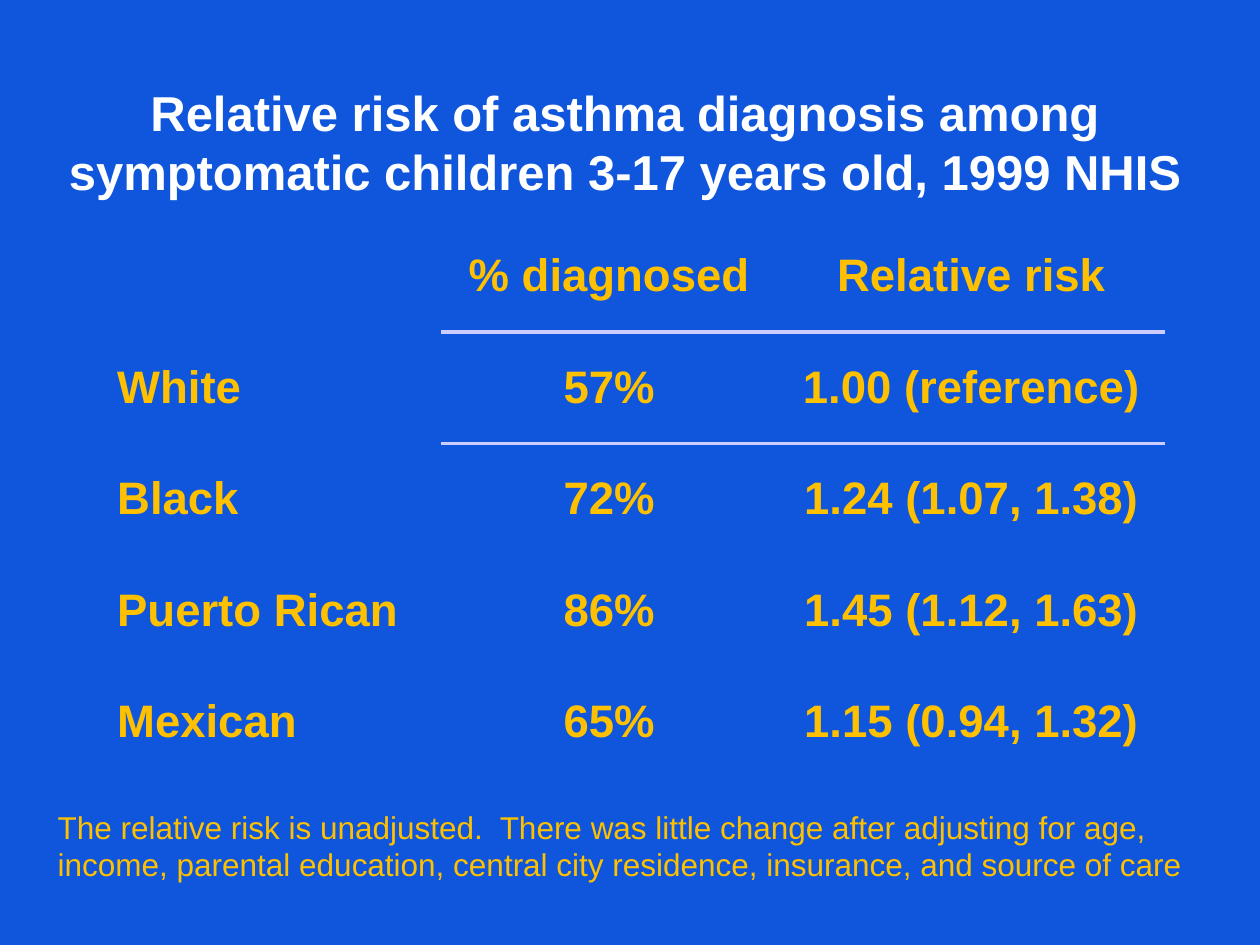
from lxml.etree import SubElement
from pptx import Presentation
from pptx.dml.color import RGBColor
from pptx.enum.text import MSO_ANCHOR, PP_ALIGN
from pptx.oxml import parse_xml
from pptx.oxml.ns import nsdecls, qn
from pptx.util import Inches, Pt

BLUE = RGBColor(0x0F, 0x56, 0xDC)
WHITE = RGBColor(0xFF, 0xFF, 0xFF)
GOLD = RGBColor(0xFF, 0xC0, 0x00)
LAVENDER = RGBColor(0xCC, 0xCC, 0xFF)
FONT = "Arial"
NO_STYLE_NO_GRID = "{2D5ABB26-0587-4C30-8999-92F81FD0307C}"

TITLE = ("Relative risk of asthma diagnosis among symptomatic "
         "children 3-17 years old, 1999 NHIS")
ROWS = [
    ("", "% diagnosed", "Relative risk"),
    ("White", "57%", "1.00 (reference)"),
    ("Black", "72%", "1.24 (1.07, 1.38)"),
    ("Puerto Rican", "86%", "1.45 (1.12, 1.63)"),
    ("Mexican", "65%", "1.15 (0.94, 1.32)"),
]
COLUMN_WIDTHS = (2.67, 2.67, 3.08)
NOTE = ("The relative risk is unadjusted.  There was little change after "
        "adjusting for age, income, parental education, central city "
        "residence, insurance, and source of care")


def write(tf, text, size, color, bold=False, align=PP_ALIGN.LEFT):
    tf.text = text
    p = tf.paragraphs[0]
    p.alignment = align
    for r in p.runs:
        r.font.name = FONT
        r.font.size = Pt(size)
        r.font.bold = bold
        r.font.color.rgb = color


def add_border(cell, side):
    tc_pr = cell._tc.get_or_add_tcPr()
    ln = parse_xml(f'<a:{side} {nsdecls("a")} w="{Pt(2.25)}"/>')
    fill = SubElement(ln, qn("a:solidFill"))
    SubElement(fill, qn("a:srgbClr"), val=str(LAVENDER))
    tc_pr.insert(0, ln)


def set_title(s, left, top, width, height):
    title = s.shapes.title
    title.left, title.top = Inches(left), Inches(top)
    title.width, title.height = Inches(width), Inches(height)
    tf = title.text_frame
    tf.word_wrap = True
    tf.vertical_anchor = MSO_ANCHOR.MIDDLE
    write(tf, TITLE, 28, WHITE, True, PP_ALIGN.CENTER)


def add_risk_table(s, left, top, width, height):
    frame = s.shapes.add_table(len(ROWS), len(COLUMN_WIDTHS), Inches(left),
                               Inches(top), Inches(width), Inches(height))
    table = frame.table
    table.horz_banding = False
    table._tbl.tblPr.find(qn("a:tableStyleId")).text = NO_STYLE_NO_GRID
    for column, column_width in zip(table.columns, COLUMN_WIDTHS):
        column.width = Inches(column_width)
    for i, values in enumerate(ROWS):
        for j, value in enumerate(values):
            cell = table.cell(i, j)
            cell.fill.background()
            cell.vertical_anchor = MSO_ANCHOR.MIDDLE
            align = PP_ALIGN.CENTER if j else PP_ALIGN.LEFT
            write(cell.text_frame, value, 26, GOLD, True, align)
    # Rule between the column heads and the figures
    for j in range(1, len(COLUMN_WIDTHS)):
        add_border(table.cell(0, j), "lnB")
        add_border(table.cell(1, j), "lnT")


def add_note(s, left, top, width, height):
    box = s.shapes.add_textbox(Inches(left), Inches(top),
                               Inches(width), Inches(height))
    tf = box.text_frame
    tf.word_wrap = True
    write(tf, NOTE, 18, GOLD)


def main():
    prs = Presentation()
    prs.slide_width, prs.slide_height = Inches(10), Inches(7.5)
    s = prs.slides.add_slide(prs.slide_layouts[5])
    s.background.fill.solid()
    s.background.fill.fore_color.rgb = BLUE
    set_title(s, 0.25, 0.5, 9.42, 1.25)
    add_risk_table(s, 0.83, 1.75, 8.42, 4.42)
    add_note(s, 0.36, 6.36, 9.25, 0.71)
    prs.save("out.pptx")


if __name__ == "__main__":
    main()
